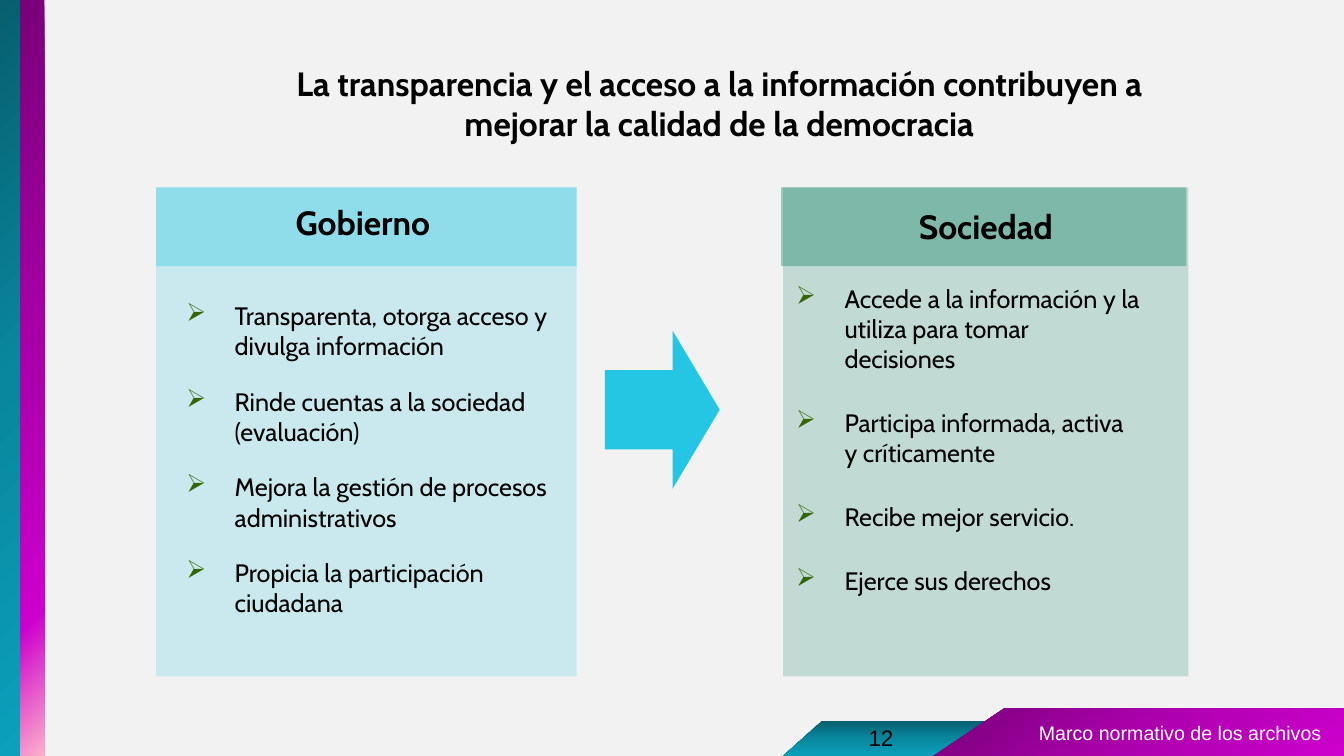
from dataclasses import dataclass

from lxml import etree
from pptx import Presentation
from pptx.dml.color import RGBColor
from pptx.enum.shapes import MSO_SHAPE
from pptx.enum.text import PP_ALIGN
from pptx.oxml.ns import qn
from pptx.util import Emu, Inches, Pt

RECTANGLE = MSO_SHAPE.RECTANGLE
PARALLELOGRAM = MSO_SHAPE.PARALLELOGRAM
RIGHT_ARROW = MSO_SHAPE.RIGHT_ARROW
LEFT, CENTER = PP_ALIGN.LEFT, PP_ALIGN.CENTER

BACKGROUND = RGBColor(0xF2, 0xF2, 0xF2)
BLACK = RGBColor(0x00, 0x00, 0x00)
WHITE = RGBColor(0xFF, 0xFF, 0xFF)
CYAN = RGBColor(0x25, 0xC6, 0xE3)
GREEN = RGBColor(0x00, 0x7A, 0x5A)
BULLET_GREEN = RGBColor(0x33, 0x66, 0x00)
TEAL_DARK = RGBColor(0x07, 0x5F, 0x6F)
TEAL = RGBColor(0x09, 0x87, 0x9E)
TEAL_LIGHT = RGBColor(0x0B, 0xA0, 0xBB)
PURPLE = RGBColor(0x79, 0x00, 0x79)
MAGENTA = RGBColor(0xAC, 0x00, 0xAC)
MAGENTA_LIGHT = RGBColor(0xCC, 0x00, 0xCC)
PINK = RGBColor(0xFD, 0xB0, 0xCB)

Stops = list[tuple[int, RGBColor]]
TEAL_STOPS: Stops = [(0, TEAL_DARK), (50, TEAL), (100, TEAL_LIGHT)]
MAGENTA_STOPS: Stops = [(0, PURPLE), (50, MAGENTA), (100, MAGENTA_LIGHT)]
BAND_STOPS: Stops = [(0, PURPLE), (50, MAGENTA), (81, MAGENTA_LIGHT), (100, PINK)]

HEADING_FONT, FOOTER_FONT = "Cabin", "Arial"
HANGING = Inches(0.48)

prs = Presentation()
prs.slide_width, prs.slide_height = Inches(13.333), Inches(7.5)
COLUMNS, ROWS = 160, 90
COLUMN, ROW = prs.slide_width / COLUMNS, prs.slide_height / ROWS
PANEL_TOP, HEADER_ROWS, PANEL_ROWS = 22.32, 9.36, 58.2


@dataclass(frozen=True)
class Area:
    """A place on the grid, in columns and rows."""
    column: float
    row: float
    columns: float
    rows: float

    def emu(self) -> tuple[Emu, Emu, Emu, Emu]:
        return (Emu(round(self.column * COLUMN)), Emu(round(self.row * ROW)),
                Emu(round(self.columns * COLUMN)), Emu(round(self.rows * ROW)))


@dataclass(frozen=True)
class Panel:
    heading: str
    color: RGBColor
    header_column: float
    body_column: float
    columns: float
    heading_area: Area
    list_area: Area
    gap: int
    points: list[str]


PANELS = [
    Panel("Sociedad", GREEN, 93, 93.24, 48.24,
          Area(101.28, 23.88, 32.16, 6), Area(93.6, 33.12, 43.44, 38.76), 24,
          ["Accede a la información y la utiliza para tomar decisiones",
           "Participa informada, activa y críticamente",
           "Recibe mejor servicio.",
           "Ejerce sus derechos"]),
    Panel("Gobierno", CYAN, 18.6, 18.6, 50.04,
          Area(27.12, 23.4, 32.16, 6), Area(21, 35.16, 45.84, 42.96), 18,
          ["Transparenta, otorga acceso y divulga información",
           "Rinde cuentas a la sociedad (evaluación)",
           "Mejora la gestión de procesos administrativos",
           "Propicia la participación ciudadana"]),
]


def add_solid(slide, kind, area: Area, color: RGBColor, opacity: int = 100):
    shape = slide.shapes.add_shape(kind, *area.emu())
    shape.shadow.inherit = False
    shape.line.fill.background()
    shape.fill.solid()
    shape.fill.fore_color.rgb = color
    if opacity < 100:
        srgb = next(shape._element.spPr.iter(qn("a:srgbClr")))
        etree.SubElement(srgb, qn("a:alpha"), val=str(opacity * 1000))
    return shape


def apply_gradient(shape, stops: Stops, angle: int) -> None:
    """Fill with any number of stops; the angle runs clockwise."""
    shape.shadow.inherit = False
    shape.line.fill.background()
    shape.fill.background()
    properties = shape._element.spPr
    gradient = etree.Element(qn("a:gradFill"), rotWithShape="1")
    stop_list = etree.SubElement(gradient, qn("a:gsLst"))
    for share, color in stops:
        stop = etree.SubElement(stop_list, qn("a:gs"), pos=str(share * 1000))
        etree.SubElement(stop, qn("a:srgbClr"), val=str(color))
    etree.SubElement(gradient, qn("a:lin"), ang=str(angle * 60000), scaled="0")
    properties.replace(properties.find(qn("a:noFill")), gradient)


def add_bullet(paragraph) -> None:
    properties = paragraph._p.get_or_add_pPr()
    properties.set("marL", str(HANGING))
    properties.set("indent", str(-HANGING))
    color = etree.SubElement(properties, qn("a:buClr"))
    etree.SubElement(color, qn("a:srgbClr"), val=str(BULLET_GREEN))
    etree.SubElement(properties, qn("a:buChar"), char="➢")


def add_text(slide, area: Area, *lines: str, size: int, font: str = HEADING_FONT,
             color: RGBColor = BLACK, bold: bool = False, align=CENTER,
             bulleted: bool = False, gap: int = 0) -> None:
    frame = slide.shapes.add_textbox(*area.emu()).text_frame
    frame.word_wrap = True
    for index, line in enumerate(lines):
        paragraph = frame.add_paragraph() if index else frame.paragraphs[0]
        if bulleted:
            add_bullet(paragraph)
        paragraph.alignment = align
        paragraph.space_after = Pt(gap)
        run = paragraph.add_run()
        run.text = line
        run.font.name, run.font.size = font, Pt(size)
        run.font.bold, run.font.color.rgb = bold, color


def add_side_bands(slide) -> None:
    for column, columns, stops in ((0, 2.4, TEAL_STOPS), (2.4, 2.88, BAND_STOPS)):
        band = slide.shapes.add_shape(RECTANGLE, *Area(column, 0, columns, ROWS).emu())
        apply_gradient(band, stops, 45)


def add_footer(slide) -> None:
    number_tab = slide.shapes.add_shape(PARALLELOGRAM, *Area(93.24, 85.8, 31.2, 4.2).emu())
    number_tab.adjustments[0] = 1.11
    apply_gradient(number_tab, TEAL_STOPS, 90)

    corners = [(round(column * COLUMN), round(row * ROW)) for column, row in
               ((119.52, 84.36), (COLUMNS, 84.36), (COLUMNS, ROWS), (111.12, ROWS))]
    outline = slide.shapes.build_freeform(*corners[0])
    outline.add_line_segments(corners[1:], close=True)
    apply_gradient(outline.convert_to_shape(), MAGENTA_STOPS, 45)
    add_text(slide, Area(121.04, 85.2, 38.96, 4.08), "Marco normativo de los archivos",
             size=14, font=FOOTER_FONT, color=WHITE)
    add_text(slide, Area(86.88, 85.56, 36, 4.4), "12", size=16, font=FOOTER_FONT)


def add_panel(slide, panel: Panel) -> None:
    header = Area(panel.header_column, PANEL_TOP, panel.columns, HEADER_ROWS)
    body = Area(panel.body_column, PANEL_TOP, panel.columns, PANEL_ROWS)
    add_solid(slide, RECTANGLE, header, panel.color, opacity=35)
    add_solid(slide, RECTANGLE, body, panel.color, opacity=20)
    add_text(slide, panel.heading_area, panel.heading, size=24, bold=True)
    add_text(slide, panel.list_area, *panel.points, size=18, align=LEFT,
             bulleted=True, gap=panel.gap)


def main() -> None:
    slide = prs.slides.add_slide(prs.slide_layouts[6])
    slide.background.fill.solid()
    slide.background.fill.fore_color.rgb = BACKGROUND
    add_side_bands(slide)
    add_footer(slide)
    for panel in PANELS:
        add_panel(slide, panel)
    arrow = add_solid(slide, RIGHT_ARROW, Area(72, 39.36, 13.68, 18.84), CYAN)
    arrow.adjustments[1] = 0.41
    add_text(slide, Area(29.4, 6.84, 112.44, 10.92),
             "La transparencia y el acceso a la información contribuyen a "
             "mejorar la calidad de la democracia", size=24, bold=True)
    prs.save("out.pptx")


if __name__ == "__main__":
    main()
